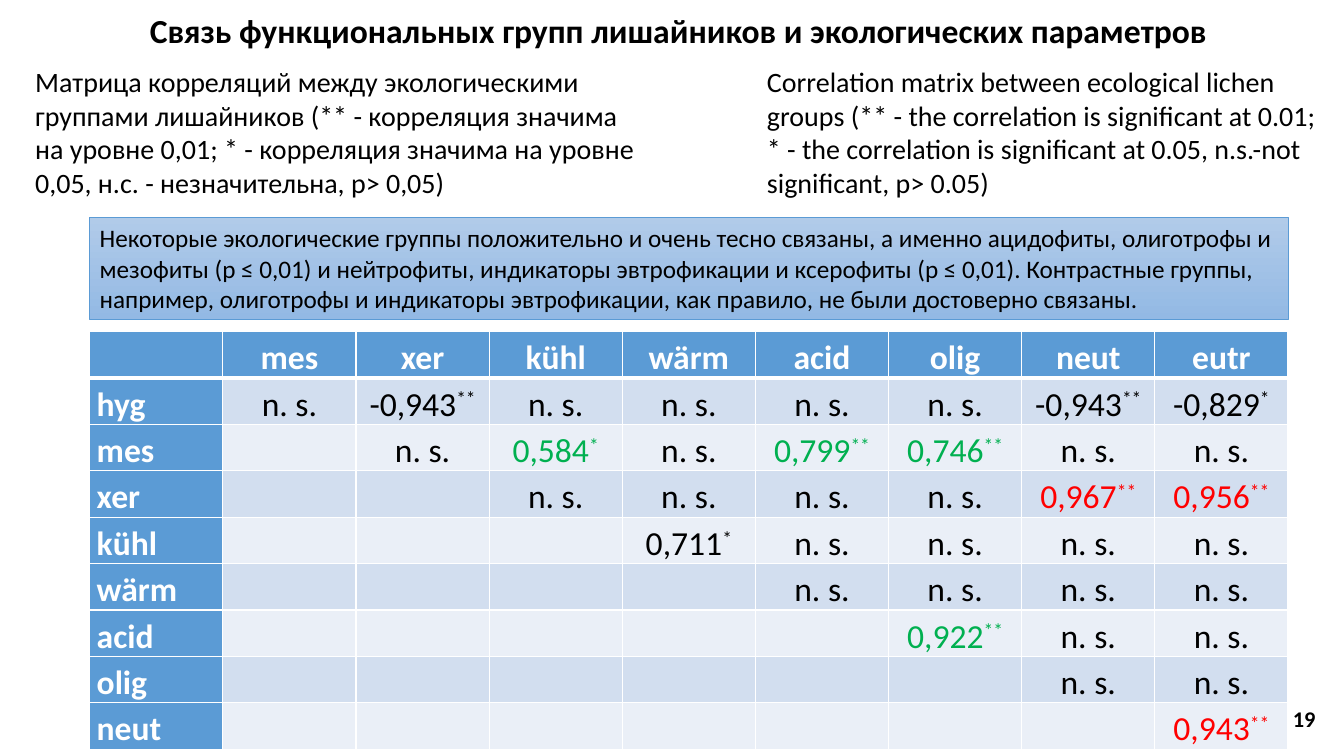
from pptx import Presentation
from pptx import util as u
from pptx.dml.color import RGBColor
from pptx.enum import shapes, text
from pptx.oxml import parse_xml
from pptx.oxml.ns import nsdecls

# Content
TITLE = "Связь функциональных групп лишайников и экологических параметров"
CAPTIONS = [  # left, width, text
    (18, 445, "Матрица корреляций между экологическими группами лишайников "
     "(** - корреляция значима на уровне 0,01; * - корреляция значима на уровне 0,05, "
     "н.с. - незначительна, р> 0,05)"),
    (540.7, 419, "Correlation matrix between ecological lichen groups "
     "(** - the correlation is significant at 0.01; * - the correlation is significant "
     "at 0.05, n.s.-not significant, p> 0.05)"),
]
SUMMARY = ("Некоторые экологические группы положительно и очень тесно связаны, а именно "
           "ацидофиты, олиготрофы и мезофиты (p ≤ 0,01) и нейтрофиты, индикаторы "
           "эвтрофикации и ксерофиты (p ≤ 0,01). Контрастные группы, например, олиготрофы "
           "и индикаторы эвтрофикации, как правило, не были достоверно связаны.")
PAGE = "19"
GROUPS = ["hyg", "mes", "xer", "kühl", "wärm", "acid", "olig", "neut", "eutr"]
NS = "n. s."
# Upper triangle: pairs not listed here are not significant
CORRELATIONS = {
    ("hyg", "xer"): ("-0,943", "**", "text"),
    ("hyg", "neut"): ("-0,943", "**", "text"),
    ("hyg", "eutr"): ("-0,829", "*", "text"),
    ("mes", "kühl"): ("0,584", "*", "green"),
    ("mes", "acid"): ("0,799", "**", "green"),
    ("mes", "olig"): ("0,746", "**", "green"),
    ("xer", "neut"): ("0,967", "**", "red"),
    ("xer", "eutr"): ("0,956", "**", "red"),
    ("kühl", "wärm"): ("0,711", "*", "text"),
    ("acid", "olig"): ("0,922", "**", "green"),
    ("neut", "eutr"): ("0,943", "**", "red"),
}

THEME = {
    "font": "Calibri",
    "text": "000000", "white": "FFFFFF", "green": "00B050", "red": "FF0000",
    "accent": "5B9BD5", "bands": ("D2DEEF", "EAEFF7"), "gradient": ("B1CBE9", "93B9E4"),
    "title": 24, "caption": 20, "summary": 18, "table": 24, "page": 16,
}
LEFT, WIDTH = 64.1, 856.1  # shared by the summary box and the table
TABLE_TOP, ROW_H = 236.9, 33.1
ALIGN, ANCHOR = text.PP_ALIGN, text.MSO_ANCHOR


def rgb(name):
    return RGBColor.from_string(THEME.get(name, name))


def write(tf, content, size, color="text", bold=False, align=ALIGN.LEFT, mark="", spacing=None):
    """Fill the first paragraph; mark is set as superscript."""
    p = tf.paragraphs[0]
    p.alignment = align
    if spacing:
        p.line_spacing = spacing
    for part in filter(None, (content, mark)):
        r = p.add_run()
        r.text = part
        r.font.name, r.font.size, r.font.bold = THEME["font"], u.Pt(THEME[size]), bold
        r.font.color.rgb = rgb(color)
    if mark:
        r._r.get_or_add_rPr().set("baseline", "30000")


def add_text(s, box, content, size, anchor=ANCHOR.TOP, **fmt):
    tf = s.shapes.add_textbox(*map(u.Pt, box)).text_frame
    tf.word_wrap = True
    tf.vertical_anchor = anchor
    write(tf, content, size, **fmt)


def style_cell(cell, fill, top=1, bottom=1):
    """White borders, then the fill, as the schema orders them."""
    tcPr = cell._tc.get_or_add_tcPr()
    for side, width in (("L", 1), ("R", 1), ("T", top), ("B", bottom)):
        tcPr.append(parse_xml(
            f'<a:ln{side} {nsdecls("a")} w="{u.Pt(width)}"><a:solidFill>'
            f'<a:srgbClr val="{THEME["white"]}"/></a:solidFill></a:ln{side}>'))
    cell.fill.solid()
    cell.fill.fore_color.rgb = rgb(fill)
    cell.margin_left = cell.margin_right = u.Pt(5)
    cell.margin_top = cell.margin_bottom = 0


def add_matrix(s):
    rows, cols = GROUPS[:-1], GROUPS[1:]
    n = len(GROUPS)
    table = s.shapes.add_table(n, n, u.Pt(LEFT), u.Pt(TABLE_TOP),
                               u.Pt(WIDTH), u.Pt(ROW_H * n)).table
    for line in table.rows:
        line.height = u.Pt(ROW_H)
    for col in table.columns:
        col.width = u.Pt(WIDTH / n)

    # Header row
    for j, name in enumerate([""] + cols):
        cell = table.cell(0, j)
        style_cell(cell, "accent", bottom=3)
        cell.vertical_anchor = ANCHOR.BOTTOM
        write(cell.text_frame, name, "table", color="white", bold=True,
              align=ALIGN.CENTER, spacing=1.15)

    # Group names and the upper triangle
    for i, row in enumerate(rows, 1):
        top = 3 if i == 1 else 1
        head = table.cell(i, 0)
        style_cell(head, "accent", top=top)
        write(head.text_frame, row, "table", color="white", bold=True, spacing=1.15)
        for j, col in enumerate(cols, 1):
            cell = table.cell(i, j)
            style_cell(cell, THEME["bands"][(i - 1) % 2], top=top)
            if j >= i:
                value, mark, color = CORRELATIONS.get((row, col), (NS, "", "text"))
                cell.vertical_anchor = ANCHOR.MIDDLE
                write(cell.text_frame, value, "table", color=color, mark=mark,
                      align=ALIGN.CENTER, spacing=1.15)


def add_summary(s):
    sp = s.shapes.add_shape(shapes.MSO_SHAPE.RECTANGLE, u.Pt(LEFT), u.Pt(155.5),
                            u.Pt(WIDTH), u.Pt(72.7))
    sp.shadow.inherit = False
    sp.fill.gradient()
    sp.fill.gradient_angle = 270
    for stop, color in zip(sp.fill.gradient_stops, THEME["gradient"]):
        stop.color.rgb = rgb(color)
    sp.line.color.rgb = rgb("accent")
    sp.line.width = u.Pt(0.5)
    sp.text_frame.word_wrap = True
    sp.text_frame.vertical_anchor = ANCHOR.TOP
    write(sp.text_frame, SUMMARY, "summary")


def main():
    prs = Presentation()
    prs.slide_width, prs.slide_height = u.Pt(960), u.Pt(540)
    s = prs.slides.add_slide(prs.slide_layouts[5])

    # Title
    title = s.shapes.title
    title.left, title.top, title.width, title.height = map(u.Pt, (21.6, 3.6, 926, 36))
    title.text_frame.vertical_anchor = ANCHOR.TOP
    title.text_frame.auto_size = text.MSO_AUTO_SIZE.NONE
    write(title.text_frame, TITLE, "title", bold=True, align=ALIGN.CENTER)

    # Page number, table, captions and summary
    add_text(s, (730.8, 499, 216, 28.8), PAGE, "page", anchor=ANCHOR.MIDDLE,
             bold=True, align=ALIGN.RIGHT)
    add_matrix(s)
    for left, width, caption in CAPTIONS:
        add_text(s, (left, 42.5, width, 104.4), caption, "caption")
    add_summary(s)
    prs.save("out.pptx")


if __name__ == "__main__":
    main()
